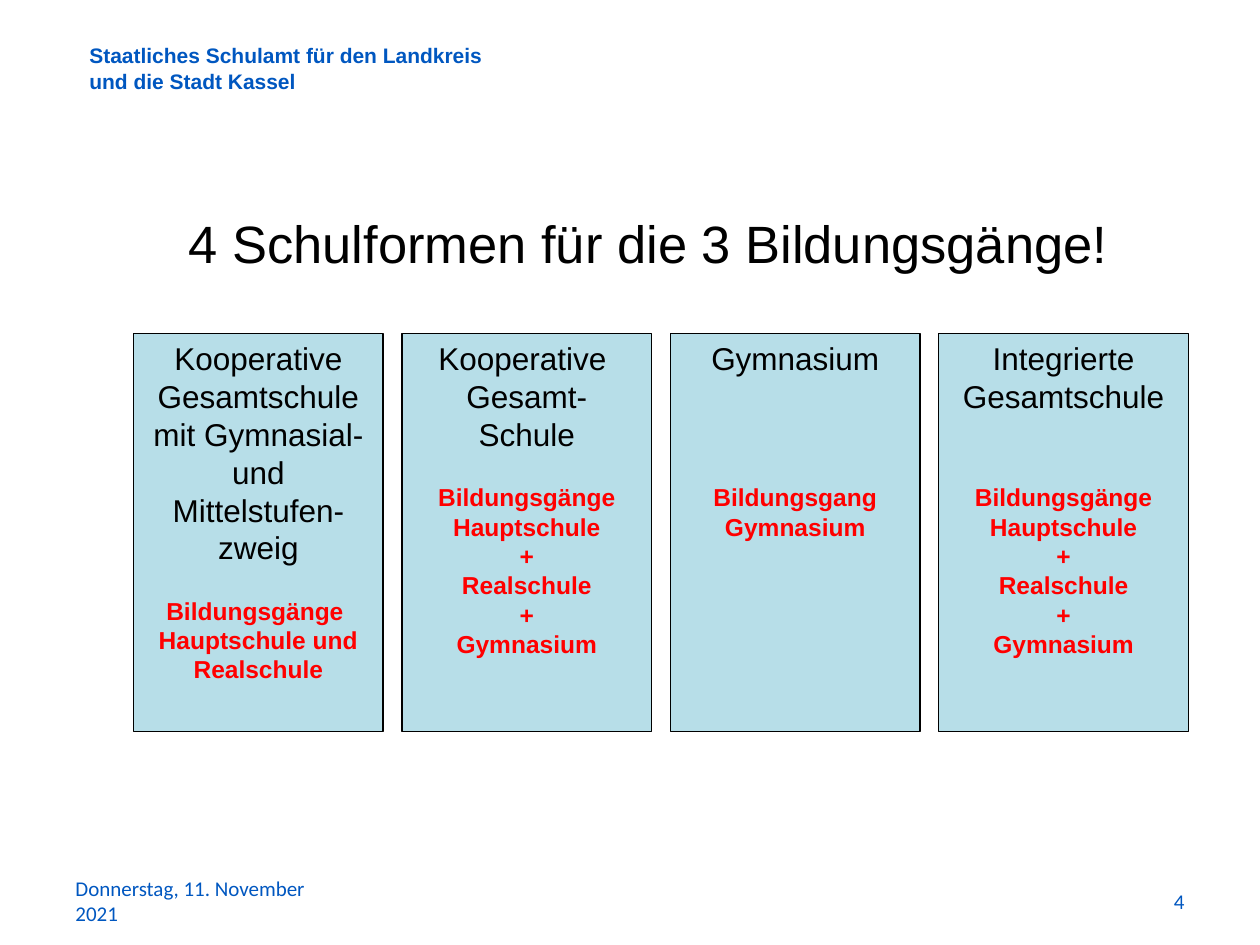
from lxml.etree import SubElement
from pptx import Presentation
from pptx.dml.color import RGBColor
from pptx.enum.shapes import MSO_SHAPE
from pptx.enum.text import MSO_ANCHOR, MSO_AUTO_SIZE, PP_ALIGN
from pptx.oxml.ns import qn
from pptx.util import Pt

BLUE, RED, BLACK, PALE = "0057C0", "FF0000", "000000", "B7DEE8"
HEADER = dict(name="Arial", size=Pt(12), bold=True, color=BLUE)
FOOTER = dict(name="Calibri", size=Pt(12), bold=False, color=BLUE)
TITLE = dict(name="Arial", size=Pt(30), bold=False, color=BLACK)
SCHOOL = dict(name="Arial", size=Pt(18), bold=False, color=BLACK)
COURSE = dict(name="Arial", size=Pt(14), bold=True, color=RED)

ALL_COURSES = ["Bildungsgänge Hauptschule", "+", "Realschule", "+", "Gymnasium"]
# School lines, course lines, space between them in points
SCHOOLS = [
    (["Kooperative Gesamtschule mit Gymnasial- und Mittelstufen-zweig"],
     ["Bildungsgänge ", "Hauptschule und", "Realschule"], 16.8),
    (["Kooperative ", "Gesamt-", "Schule"], ALL_COURSES, 16.8),
    (["Gymnasium"], ["Bildungsgang Gymnasium"], 60),
    (["Integrierte Gesamtschule"], ALL_COURSES, 38.4),
]


def rgb(value):
    return RGBColor.from_string(value)


def format_font(font, style):
    for key, value in style.items():
        if key == "color":
            font.color.rgb = rgb(value)
        else:
            setattr(font, key, value)


def write_lines(frame, lines, align=PP_ALIGN.LEFT):
    """Fill a text frame from (text, style, space before) entries."""
    frame.word_wrap = True
    frame.auto_size = MSO_AUTO_SIZE.NONE
    for index, (text, style, space) in enumerate(lines):
        para = frame.paragraphs[0] if index == 0 else frame.add_paragraph()
        para.alignment = align
        if space:
            para.space_before = Pt(space)
        span = para.add_run()
        span.text = text
        format_font(span.font, style)


def add_label(page, box, texts, style, align=PP_ALIGN.LEFT, anchor=MSO_ANCHOR.TOP):
    label = page.shapes.add_textbox(*map(Pt, box))
    label.text_frame.vertical_anchor = anchor
    write_lines(label.text_frame, [(text, style, 0) for text in texts], align)


def add_title(page, box):
    title = page.shapes.title
    title.left, title.top, title.width, title.height = map(Pt, box)
    title.text_frame.vertical_anchor = MSO_ANCHOR.TOP
    write_lines(title.text_frame,
                [("4 Schulformen für die 3 Bildungsgänge!", TITLE, 0)], PP_ALIGN.CENTER)


def add_school(page, box, names, courses, gap):
    card = page.shapes.add_shape(MSO_SHAPE.RECTANGLE, *map(Pt, box))
    card.shadow.inherit = False
    card.fill.solid()
    card.fill.fore_color.rgb = rgb(PALE)
    card.line.color.rgb = rgb(BLACK)
    card.line.width = Pt(0.75)
    card.text_frame.vertical_anchor = MSO_ANCHOR.TOP
    lines = [(name, SCHOOL, 0) for name in names]
    lines += [(course, COURSE, 0 if index else gap) for index, course in enumerate(courses)]
    write_lines(card.text_frame, lines, PP_ALIGN.CENTER)


def add_schools(page, box):
    """Share the width of the box among equal cards."""
    left, top, width, height = box
    gap = 10.8
    card_width = (width - gap * (len(SCHOOLS) - 1)) / len(SCHOOLS)
    for index, school in enumerate(SCHOOLS):
        card_left = left + index * (card_width + gap)
        add_school(page, (card_left, top, card_width, height), *school)


def add_footer(page, box):
    left, top, width, height = box
    part = 168
    add_label(page, (left, top, part, height), ["Donnerstag, 11. November 2021"],
              FOOTER, anchor=MSO_ANCHOR.MIDDLE)
    add_label(page, (left + width - part, top, part, height), ["4"],
              FOOTER, PP_ALIGN.RIGHT, MSO_ANCHOR.MIDDLE)


def main():
    deck = Presentation()
    deck.slide_width, deck.slide_height = Pt(720), Pt(540)
    page = deck.slides.add_slide(deck.slide_layouts[5])
    add_label(page, (44, 21, 305, 36),
              ["Staatliches Schulamt für den Landkreis", "und die Stadt Kassel"], HEADER)
    add_title(page, (57, 117, 627, 41))
    add_footer(page, (36, 500.5, 648, 28.75))
    add_schools(page, (76.4, 190.4, 602.7, 227.5))
    deck.save("out.pptx")


if __name__ == "__main__":
    main()
